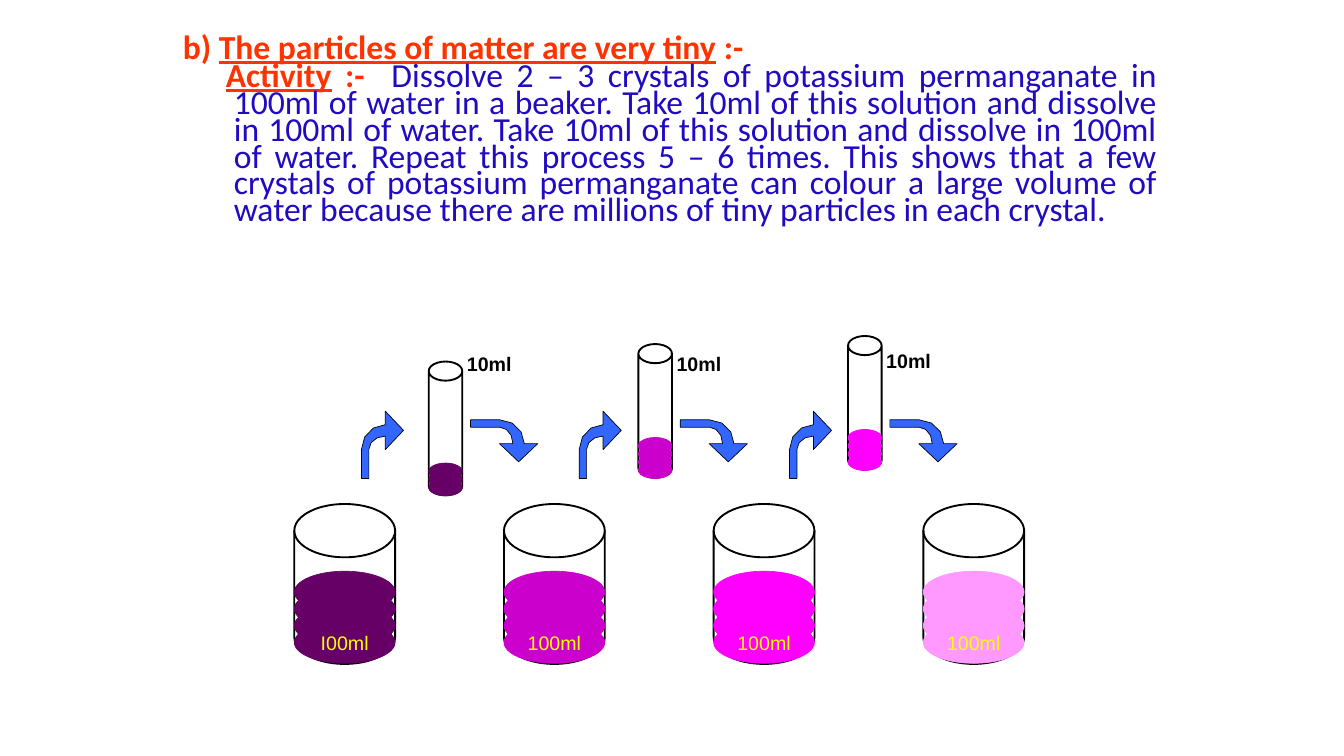
from dataclasses import dataclass
from math import cos, radians, sin

from pptx import Presentation
from pptx.dml.color import RGBColor
from pptx.enum.shapes import MSO_SHAPE
from pptx.enum.text import MSO_ANCHOR, PP_ALIGN
from pptx.util import Inches, Pt

BEAKER = MSO_SHAPE.FLOWCHART_MAGNETIC_DISK
TUBE = MSO_SHAPE.CAN
OVAL = MSO_SHAPE.OVAL
MIDDLE, TOP = MSO_ANCHOR.MIDDLE, MSO_ANCHOR.TOP
LEFT, CENTER, JUSTIFY = PP_ALIGN.LEFT, PP_ALIGN.CENTER, PP_ALIGN.JUSTIFY

STEP = 3.12
ACTIVITY = (
    "Dissolve 2 – 3 crystals of potassium permanganate in 100ml of water in a beaker. "
    "Take 10ml of this solution and dissolve in 100ml of water. "
    "Take 10ml of this solution and dissolve in 100ml of water. "
    "Repeat this process 5 – 6 times. This shows that a few crystals of potassium "
    "permanganate can colour a large volume of water because there are millions of "
    "tiny particles in each crystal."
)


@dataclass(frozen=True)
class Theme:
    """Colours, fonts and type sizes of the slide."""

    heading: str = "FF3300"
    body: str = "200AC2"
    ink: str = "000000"
    volume: str = "FFFF00"
    arrow: str = "3366FF"
    solutions: tuple = ("660066", "CC00CC", "FF00FF", "FF99FF")
    text_font: str = "Calibri"
    label_font: str = "Arial"
    text_size: int = 36
    label_size: int = 21
    glass_line: float = 2
    thin_line: float = 0.75


class Painter:
    """Draws the elements of the slide in one theme."""

    def __init__(self, slide, theme):
        self.slide = slide
        self.theme = theme

    def place(self, shape, left, top, width, height):
        """Move and size a shape in inches."""
        shape.left, shape.top = Inches(left), Inches(top)
        shape.width, shape.height = Inches(width), Inches(height)

    def style(self, shape, fill, line, weight):
        """Set the fill and outline of a shape."""
        shape.shadow.inherit = False
        if fill:
            shape.fill.solid()
            shape.fill.fore_color.rgb = RGBColor.from_string(fill)
        else:
            shape.fill.background()
        shape.line.color.rgb = RGBColor.from_string(line)
        shape.line.width = Pt(weight)

    def prose(self, placeholder, area, anchor, align, spans):
        """Fill a placeholder with (text, colour, bold, underline) spans."""
        self.place(placeholder, *area)
        frame = placeholder.text_frame
        frame.vertical_anchor = anchor
        frame.word_wrap = True
        para = frame.paragraphs[0]
        para.alignment = align
        para.space_before = Pt(0)
        para.font.name = self.theme.text_font
        para.font.size = Pt(self.theme.text_size)
        for text, color, bold, underline in spans:
            span = para.add_run()
            span.text = text
            span.font.bold = bold
            span.font.underline = underline
            span.font.color.rgb = RGBColor.from_string(color)
        return para

    def caption(self, shape, text, color, bold, align):
        """Write a one-line volume in a shape."""
        shape.text_frame.word_wrap = False
        para = shape.text_frame.paragraphs[0]
        para.text = text
        para.alignment = align
        para.font.name = self.theme.label_font
        para.font.size = Pt(self.theme.label_size)
        para.font.bold = bold
        para.font.color.rgb = RGBColor.from_string(color)

    def label(self, left, top, text):
        """Add a free-standing volume label."""
        box = self.slide.shapes.add_textbox(Inches(left), Inches(top), Inches(0.87), Inches(0.45))
        self.caption(box, text, self.theme.ink, True, LEFT)

    def shape(self, kind, area, fill, line, weight):
        """Add a preset shape."""
        shape = self.slide.shapes.add_shape(kind, *map(Inches, area))
        self.style(shape, fill, line, weight)
        return shape

    def glass(self, kind, area):
        """Add an empty glass vessel."""
        return self.shape(kind, area, None, self.theme.ink, self.theme.glass_line)

    def liquid(self, left, tops, width, height, color):
        """Stack ovals of solution and return the last one."""
        for top in tops:
            layer = self.shape(OVAL, (left, top, width, height), color, color, self.theme.thin_line)
        return layer

    def beaker(self, left, color, text):
        """Add a beaker holding labelled solution."""
        self.glass(BEAKER, (left, 7.5, 1.5, 2.38))
        tops = [8.5 + 0.25 * layer for layer in range(4)]
        surface = self.liquid(left, tops, 1.5, 0.62, color)
        surface.text_frame.vertical_anchor = MIDDLE
        self.caption(surface, text, self.theme.volume, False, CENTER)

    def tube(self, left, top, layers, color):
        """Add a test tube holding solution."""
        tube = self.glass(TUBE, (left, top, 0.5, 1.99))
        tube.adjustments[0] = 0.57
        tops = [top + 1.75 - 0.12 * layer for layer in reversed(range(layers))]
        self.liquid(left, tops, 0.5, 0.25, color)

    def arrow(self, left, top, rotation):
        """Add a bent arrow, outlined in thousandths of an inch."""
        angles = range(0, 91, 30)
        outer = [(355 - 355 * sin(radians(a)), 565 - 365 * cos(radians(a))) for a in angles]
        inner = [(355 - 245 * cos(radians(a)), 565 - 195 * sin(radians(a))) for a in angles]
        points = [(355, 0), *outer, (0, 1000), (110, 1000), *inner, (355, 570)]
        builder = self.slide.shapes.build_freeform(625, 285, scale=Inches(1) / 1000)
        builder.add_line_segments(points, close=True)
        arrow = builder.convert_to_shape(Inches(left), Inches(top))
        arrow.rotation = rotation
        self.style(arrow, self.theme.arrow, self.theme.ink, self.theme.thin_line)


def main():
    """Build the slide and save it."""
    deck = Presentation()
    deck.slide_width, deck.slide_height = Inches(20), Inches(11.25)
    page = deck.slides.add_slide(deck.slide_layouts[0])
    theme = Theme()
    painter = Painter(page, theme)

    painter.prose(page.shapes.title, (2.62, 0.12, 12.75, 1.13), MIDDLE, LEFT, [
        ("b) ", theme.heading, True, False),
        ("The particles of matter are very tiny", theme.heading, True, True),
        (" :-", theme.heading, True, False),
    ])
    para = painter.prose(page.placeholders[1], (2.88, 0.95, 14.44, 5), TOP, JUSTIFY, [
        ("Activity", theme.heading, True, True),
        (" :-", theme.heading, True, False),
        (" ", theme.heading, True, False),
        (ACTIVITY, theme.body, False, False),
    ])
    para.line_spacing = Pt(28.8)
    properties = para._p.get_or_add_pPr()
    properties.set("marL", str(Inches(0.5)))
    properties.set("indent", str(Inches(-0.12)))
    gap = para.runs[2]
    gap._r.get_or_add_rPr().set("spc", "1400")

    volumes = ("I00ml", "100ml", "100ml", "100ml")
    for index, (color, volume) in enumerate(zip(theme.solutions, volumes)):
        painter.beaker(4.38 + STEP * index, color, volume)

    transfers = ((5.38, 3, 5.18, 5.38), (5.12, 4, 5.18, 8.62), (5, 4, 5.15, 11.75))
    for index, (tube_top, layers, label_top, arrow_left) in enumerate(transfers):
        shift = STEP * index
        painter.tube(6.38 + shift, tube_top, layers, theme.solutions[index])
        painter.label(6.85 + shift, label_top, "10ml")
        painter.arrow(arrow_left, 6.12, 0)
        painter.arrow(7.19 + shift, 6.06, 90)

    deck.save("out.pptx")


if __name__ == "__main__":
    main()
